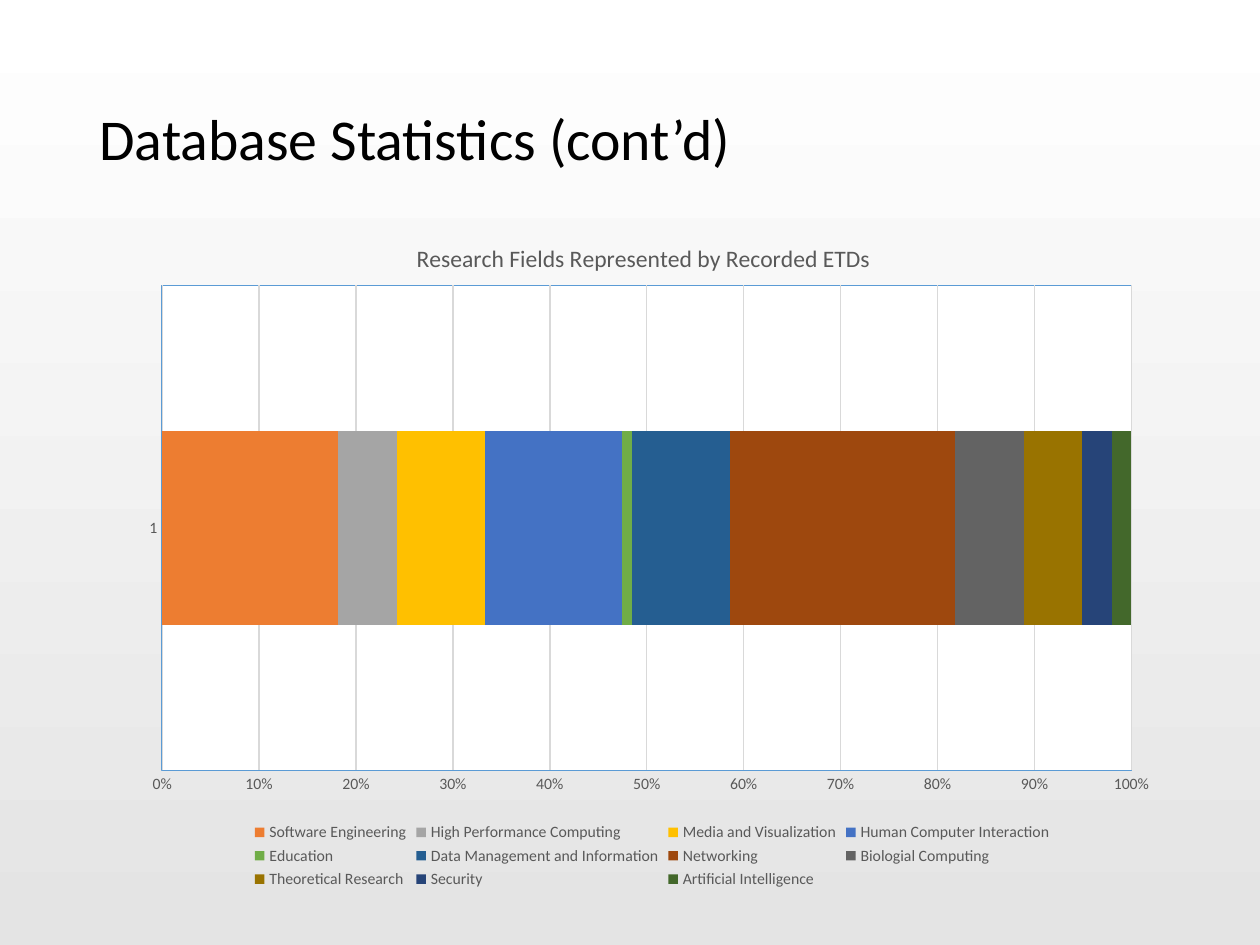
from lxml import etree
from pptx import Presentation
from pptx.chart.data import CategoryChartData
from pptx.dml.color import RGBColor
from pptx.enum.chart import XL_CHART_TYPE, XL_LEGEND_POSITION, XL_TICK_MARK
from pptx.enum.text import MSO_ANCHOR, PP_ALIGN
from pptx.oxml import parse_xml
from pptx.oxml.ns import nsdecls, qn
from pptx.util import Cm, Pt

STACKED_BAR = XL_CHART_TYPE.BAR_STACKED_100
LEGEND_BOTTOM = XL_LEGEND_POSITION.BOTTOM
NO_TICK = XL_TICK_MARK.NONE
MIDDLE = MSO_ANCHOR.MIDDLE
LEFT, CENTER = PP_ALIGN.LEFT, PP_ALIGN.CENTER
TITLE_ONLY = 5

RESEARCH_FIELDS = [
    ("Software Engineering", 18, "ED7D31"),
    ("High Performance Computing", 6, "A5A5A5"),
    ("Media and Visualization", 9, "FFC000"),
    ("Human Computer Interaction", 14, "4472C4"),
    ("Education", 1, "70AD47"),
    ("Data Management and Information", 10, "255E91"),
    ("Networking", 23, "9E480E"),
    ("Biologial Computing", 7, "636363"),
    ("Theoretical Research", 6, "997300"),
    ("Security", 3, "264478"),
    ("Artificial Intelligence", 2, "43682B"),
]


def rgb(color):
    return RGBColor.from_string(color)


def format_font(font, size, color, name="Calibri"):
    font.name = name
    font.size = Pt(size)
    font.bold = False
    font.color.rgb = rgb(color)


def write_text(frame, text, *, size, color, align=LEFT, line_spacing=None):
    paragraph = frame.paragraphs[0]
    paragraph.alignment = align
    paragraph.line_spacing = line_spacing
    run = paragraph.add_run()
    run.text = text
    format_font(run.font, size, color)


def format_line(line, color, width=0.75):
    line.color.rgb = rgb(color)
    line.width = Pt(width)


def place_chart_part(part, index, **settings):
    """Give a chart part a manual layout, as fractions of the chart area."""
    for old_layout in part.findall(qn("c:layout")):
        part.remove(old_layout)
    layout = parse_xml(f"<c:layout {nsdecls('c')}><c:manualLayout/></c:layout>")
    for tag, value in settings.items():
        etree.SubElement(layout[0], qn(f"c:{tag}")).set("val", str(value))
    part.insert(index, layout)


class StatisticsSlide:
    text_color = "000000"
    muted_color = "595959"
    grid_color = "D9D9D9"
    label_size = 9

    def __init__(self, presentation):
        layout = presentation.slide_layouts[TITLE_ONLY]
        self.slide = presentation.slides.add_slide(layout)

    def background(self, top_color, bottom_color):
        fill = self.slide.background.fill
        fill.gradient()
        fill.gradient_angle = 270
        for stop, color in zip(fill.gradient_stops, (top_color, bottom_color)):
            stop.color.rgb = rgb(color)

    def title(self, text):
        title = self.slide.shapes.title
        title.left, title.top = Cm(1.75), Cm(1.02)
        title.width, title.height = Cm(21.89), Cm(3.68)
        title.text_frame.vertical_anchor = MIDDLE
        write_text(title.text_frame, text, size=33, color=self.text_color,
                   line_spacing=0.9)

    def share_chart(self, heading, fields):
        data = CategoryChartData()
        data.categories = ["1"]
        for name, share, _ in fields:
            data.add_series(name, [share])
        chart = self.slide.shapes.add_chart(
            STACKED_BAR, Cm(2.64), Cm(4.24), Cm(21.01), Cm(13.77), data).chart
        format_font(chart.font, 10, self.text_color)

        chart.has_title = True
        write_text(chart.chart_title.text_frame, heading, size=13.5,
                   color=self.muted_color, align=CENTER)
        heading_part = chart.chart_title._element
        place_chart_part(heading_part, 1, xMode="edge", yMode="edge",
                         x=0.27, y=0.04)

        bars = chart.plots[0]
        bars.gap_width = 150
        bars.overlap = 100
        bars.vary_by_categories = False
        for series, (_, _, color) in zip(bars.series, fields):
            series.format.fill.solid()
            series.format.fill.fore_color.rgb = rgb(color)

        self.axes(chart)
        self.plot_area(chart)

        chart.has_legend = True
        chart.legend.position = LEGEND_BOTTOM
        chart.legend.include_in_layout = False
        format_font(chart.legend.font, self.label_size, self.muted_color)

    def axes(self, chart):
        for axis in (chart.category_axis, chart.value_axis):
            axis.major_tick_mark = axis.minor_tick_mark = NO_TICK
            format_font(axis.tick_labels.font, self.label_size, self.muted_color)
        format_line(chart.category_axis.format.line, self.grid_color)
        shares = chart.value_axis
        shares.format.line.fill.background()
        shares.has_major_gridlines = True
        format_line(shares.major_gridlines.format.line, self.grid_color)
        shares.tick_labels.number_format = "0%"
        shares.tick_labels.number_format_is_linked = False

    def plot_area(self, chart, fill="FFFFFF", border="5B9BD5"):
        area = chart._chartSpace.chart.plotArea
        place_chart_part(area, 0, layoutTarget="inner", xMode="edge",
                         yMode="edge", x=0.03, y=0.11, w=0.93, h=0.71)
        area.append(parse_xml(
            f"<c:spPr {nsdecls('c', 'a')}>"
            f'<a:solidFill><a:srgbClr val="{fill}"/></a:solidFill>'
            f'<a:ln w="{Pt(1)}"><a:solidFill><a:srgbClr val="{border}"/>'
            "</a:solidFill></a:ln></c:spPr>"))


def main():
    presentation = Presentation()
    presentation.slide_width, presentation.slide_height = Cm(25.4), Cm(19.05)
    statistics = StatisticsSlide(presentation)
    statistics.background("FFFFFF", "E4E4E4")
    statistics.title("Database Statistics (cont’d)")
    statistics.share_chart("Research Fields Represented by Recorded ETDs",
                           RESEARCH_FIELDS)
    presentation.save("out.pptx")


if __name__ == "__main__":
    main()
